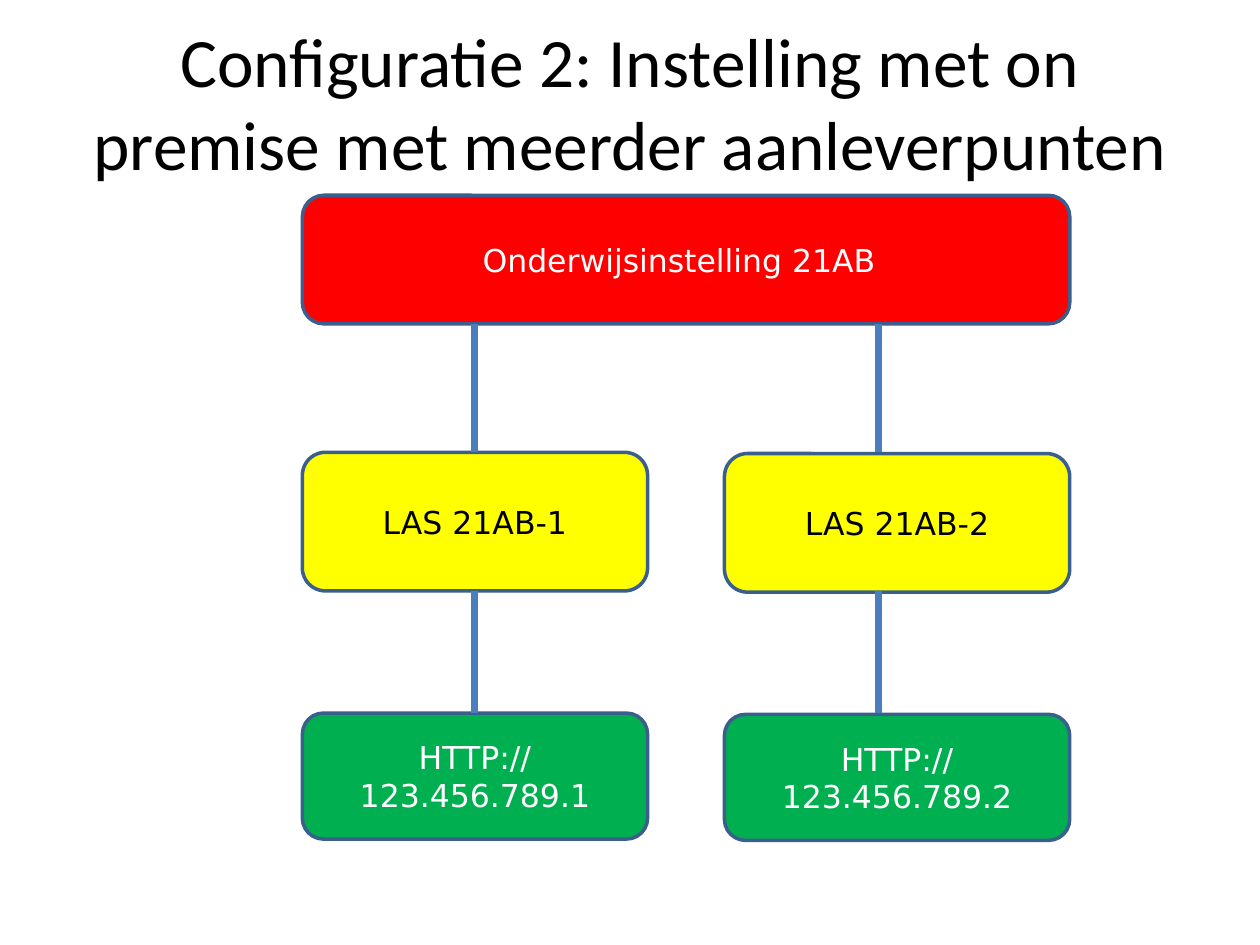
from lxml import etree
from pptx import Presentation
from pptx.dml.color import RGBColor
from pptx.enum import shapes, text
from pptx.oxml.ns import qn
from pptx.util import Inches, Pt

RED = RGBColor(0xFF, 0x00, 0x00)
YELLOW = RGBColor(0xFF, 0xFF, 0x00)
GREEN = RGBColor(0x00, 0xB0, 0x50)
WHITE = RGBColor(0xFF, 0xFF, 0xFF)
BLACK = RGBColor(0x00, 0x00, 0x00)
BORDER = RGBColor(0x3A, 0x5F, 0x8C)
LINK = RGBColor(0x4B, 0x7E, 0xBC)

LEFT, WIDTH = 2.4, 2.74
# Per branch: number, box left, box drop, link centre
BRANCHES = [(1, LEFT, 0, 3.77), (2, 5.75, 0.01, 6.97)]


def write(shape, words, size=18, font="DejaVu Sans", color=WHITE, right=0.1):
    """Fill a shape with centred text, one paragraph per line."""
    frame = shape.text_frame
    frame.word_wrap = True
    frame.auto_size = text.MSO_AUTO_SIZE.NONE
    frame.vertical_anchor = text.MSO_ANCHOR.MIDDLE
    frame.margin_right = Inches(right)
    frame.text = words
    for para in frame.paragraphs:
        para.alignment = text.PP_ALIGN.CENTER
        for run in para.runs:
            run.font.size = Pt(size)
            run.font.name = font
            run.font.color.rgb = color


def place(shape, left, top, width, height):
    shape.left, shape.top = Inches(left), Inches(top)
    shape.width, shape.height = Inches(width), Inches(height)


def add_box(slide, words, left, top, width, height, fill, **style):
    box = slide.shapes.add_shape(
        shapes.MSO_SHAPE.ROUNDED_RECTANGLE,
        Inches(left), Inches(top), Inches(width), Inches(height))
    box.shadow.inherit = False
    box.fill.solid()
    box.fill.fore_color.rgb = fill
    box.line.color.rgb = BORDER
    box.line.width = Pt(2)
    write(box, words, **style)


def add_link(slide, x, top, bottom):
    link = slide.shapes.add_connector(
        shapes.MSO_CONNECTOR.STRAIGHT,
        Inches(x), Inches(top), Inches(x), Inches(bottom))
    link.line.color.rgb = LINK
    link.line.width = Pt(4)
    etree.SubElement(link._element.spPr, qn("a:effectLst"))


def main():
    deck = Presentation()
    deck.slide_width, deck.slide_height = Inches(10), Inches(7.5)
    slide = deck.slides.add_slide(deck.slide_layouts[5])

    # Title
    title = slide.shapes.title
    place(title, 0.5, 0.3, 9, 1.01)
    write(title, "Configuratie 2: Instelling met on premise met meerder "
          "aanleverpunten", size=39.6, font="Calibri", color=BLACK)

    # Institution across both branches
    add_box(slide, "Onderwijsinstelling 21AB", LEFT, 1.55, 6.09, 1.02, RED,
            right=0.21)

    # System and address of each branch, with their links
    for num, left, drop, x in BRANCHES:
        add_box(slide, f"LAS 21AB-{num}", left, 3.59 + drop, WIDTH, 1.1,
                YELLOW, color=BLACK)
        add_box(slide, f"HTTP://\n123.456.789.{num}", left, 5.66 + drop,
                WIDTH, 1, GREEN)
        add_link(slide, x, 2.57, 3.59)
        add_link(slide, x, 4.69, 5.66)

    deck.save("out.pptx")


if __name__ == "__main__":
    main()
